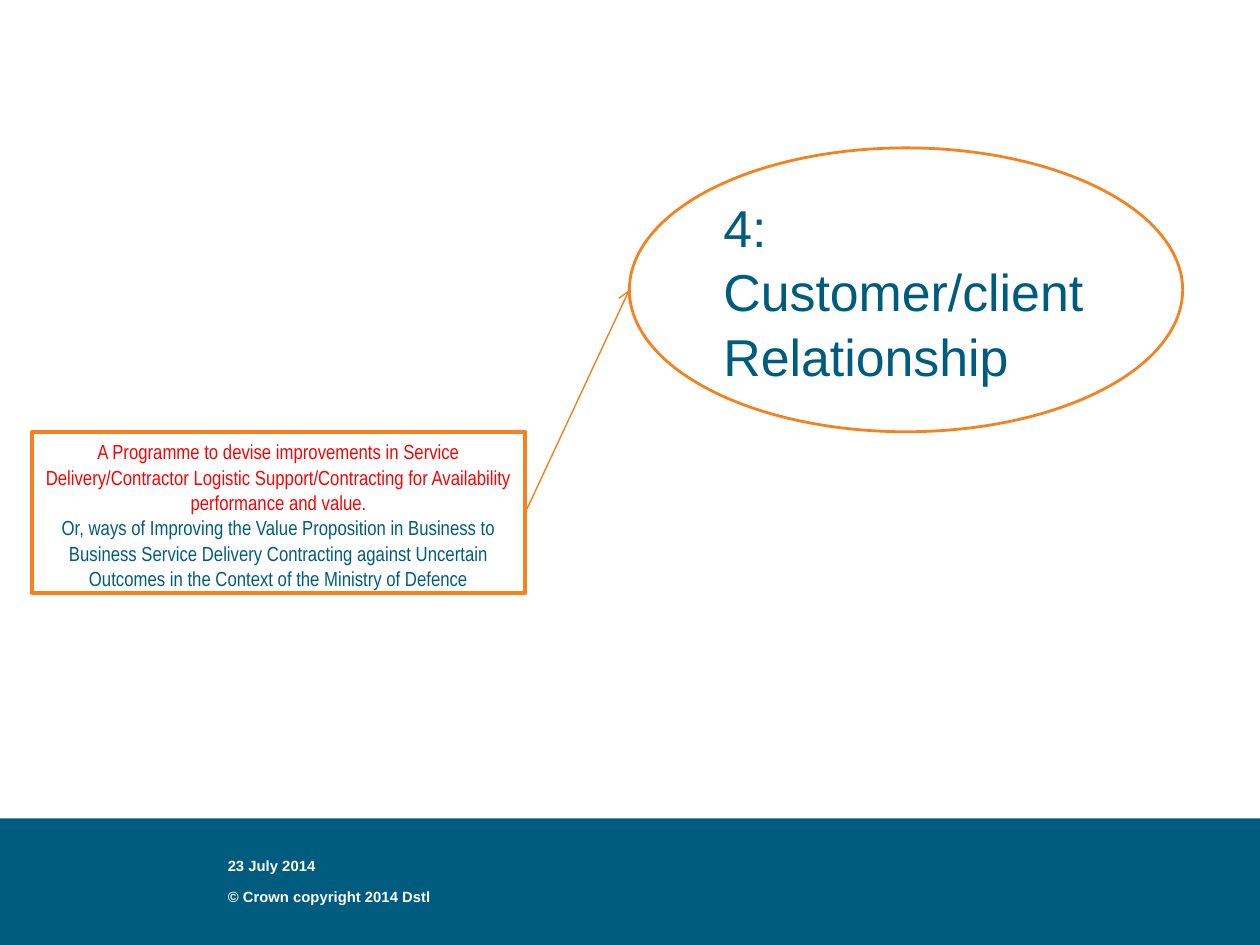
from dataclasses import dataclass

from lxml.etree import SubElement
from pptx import Presentation
from pptx.dml.color import RGBColor
from pptx.enum.shapes import MSO_CONNECTOR, MSO_SHAPE
from pptx.enum.text import MSO_ANCHOR, PP_ALIGN
from pptx.oxml.ns import qn
from pptx.util import Inches, Pt


@dataclass(frozen=True)
class Theme:
    teal: str = "005C7E"
    orange: str = "F5821F"
    arrow: str = "F57F19"
    red: str = "FF0000"
    white: str = "FFFFFF"
    font: str = "Arial"
    narrow: str = "Arial Narrow"
    footer_size: float = 8
    body_size: float = 11
    topic_size: float = 28
    line_spacing: float = 1.04


THEME = Theme()
SLIDE_SIZE = (9.45, 7.09)
FOOTER_BAND = (0, 6.14, 9.45, 0.95)
FOOTER_LINES = [
    ("23 July 2014", 6.30, MSO_ANCHOR.BOTTOM),
    ("© Crown copyright 2014 Dstl", 6.61, MSO_ANCHOR.TOP),
]
FOOTER_LEFT, FOOTER_WIDTH, FOOTER_HEIGHT = 1.61, 1.81, 0.31

PROGRAMME_AREA = (0.24, 3.24, 3.7, 1.21)
PROGRAMME = [
    ("A Programme to devise improvements in Service Delivery/Contractor Logistic "
     "Support/Contracting for Availability performance and value.", THEME.red),
    ("Or, ways of Improving the Value Proposition in Business to Business Service "
     "Delivery Contracting against Uncertain Outcomes in the Context of the "
     "Ministry of Defence", THEME.teal),
]
TOPIC_AREA = (4.72, 1.11, 4.15, 2.13)
TOPIC = [("4: Customer/client", THEME.teal), ("Relationship", THEME.teal)]


def color(value):
    return RGBColor.from_string(value)


def write(shape, lines, font, size, align=PP_ALIGN.LEFT, anchor=MSO_ANCHOR.TOP,
          bold=False, spacing=1.0):
    """Fill the shape with one paragraph per (text, colour) pair."""
    frame = shape.text_frame
    frame.word_wrap = True
    frame.vertical_anchor = anchor
    frame.text = "\n".join(text for text, _ in lines)
    for para, (_, ink) in zip(frame.paragraphs, lines):
        para.alignment = align
        para.line_spacing = spacing
        for span in para.runs:
            span.font.name = font
            span.font.size = Pt(size)
            span.font.bold = bold
            span.font.color.rgb = color(ink)


def add_outline(page, kind, area, width):
    shape = page.shapes.add_shape(kind, *map(Inches, area))
    shape.shadow.inherit = False
    shape.fill.background()
    shape.line.color.rgb = color(THEME.orange)
    shape.line.width = Pt(width)
    return shape


def add_footer(page):
    band = page.shapes.add_shape(MSO_SHAPE.RECTANGLE, *map(Inches, FOOTER_BAND))
    band.shadow.inherit = False
    band.fill.solid()
    band.fill.fore_color.rgb = color(THEME.teal)
    band.line.fill.background()
    for text, top, anchor in FOOTER_LINES:
        area = (FOOTER_LEFT, top, FOOTER_WIDTH, FOOTER_HEIGHT)
        box = page.shapes.add_textbox(*map(Inches, area))
        write(box, [(text, THEME.white)], THEME.font, THEME.footer_size,
              anchor=anchor, bold=True)


def add_arrow(page, programme, topic):
    """Link the programme's right side to the left end of the topic ellipse."""
    arrow = page.shapes.add_connector(
        MSO_CONNECTOR.STRAIGHT,
        programme.left + programme.width, programme.top + programme.height // 2,
        topic.left, topic.top + topic.height // 2)
    arrow.begin_connect(programme, 3)
    arrow.line.color.rgb = color(THEME.arrow)
    arrow.line.width = Pt(0.75)
    SubElement(arrow.line._get_or_add_ln(), qn("a:tailEnd"), type="arrow")
    SubElement(arrow._element.spPr, qn("a:effectLst"))


def main():
    deck = Presentation()
    deck.slide_width, deck.slide_height = map(Inches, SLIDE_SIZE)
    page = deck.slides.add_slide(deck.slide_layouts[6])
    add_footer(page)

    programme = add_outline(page, MSO_SHAPE.RECTANGLE, PROGRAMME_AREA, 2)
    write(programme, PROGRAMME, THEME.narrow, THEME.body_size,
          align=PP_ALIGN.CENTER, spacing=THEME.line_spacing)
    topic = add_outline(page, MSO_SHAPE.OVAL, TOPIC_AREA, 1.5)
    write(topic, TOPIC, THEME.font, THEME.topic_size,
          anchor=MSO_ANCHOR.MIDDLE, spacing=THEME.line_spacing)
    add_arrow(page, programme, topic)
    deck.save("out.pptx")


if __name__ == "__main__":
    main()
